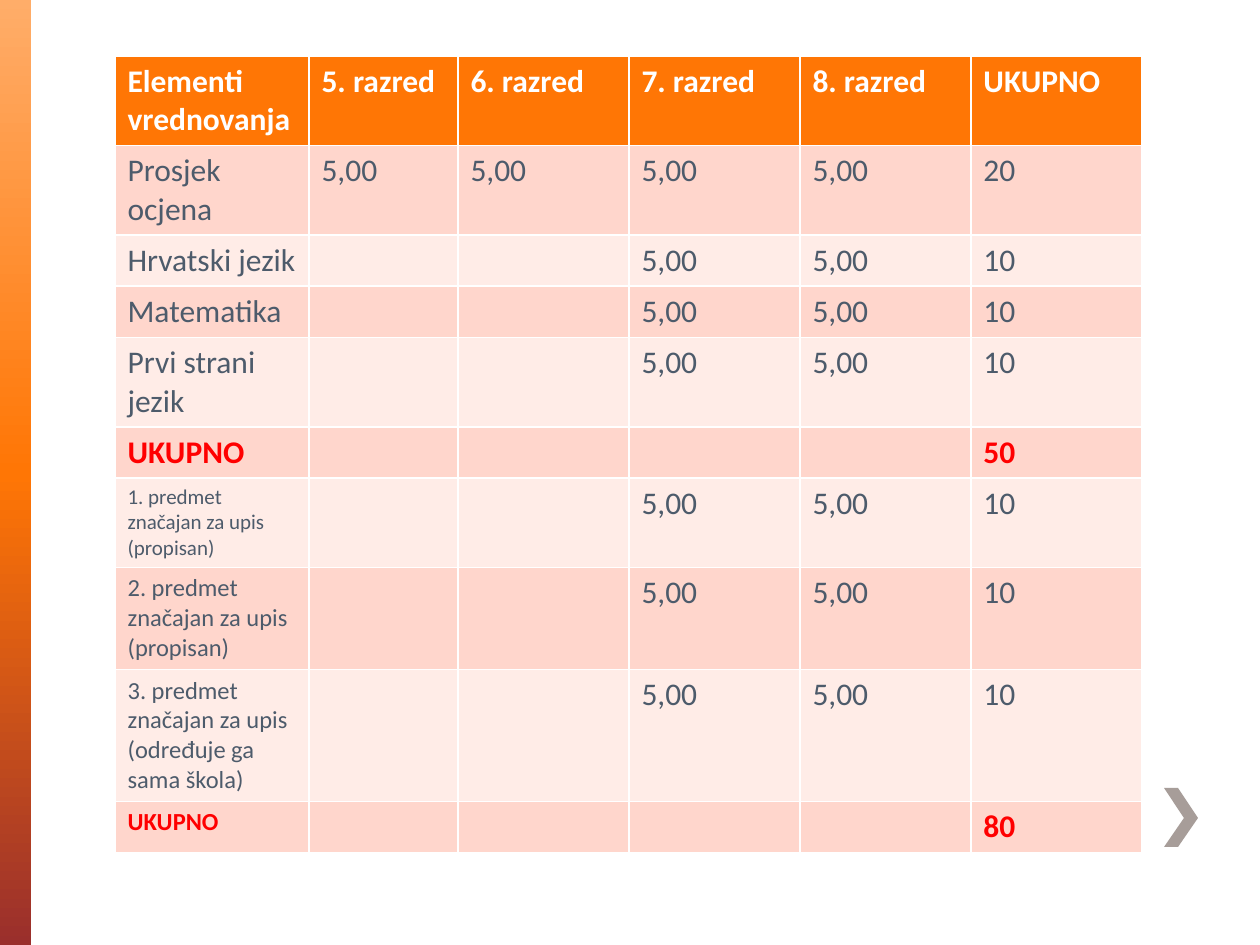
from copy import deepcopy

from pptx import Presentation
from pptx.dml.color import RGBColor
from pptx.enum.shapes import MSO_SHAPE
from pptx.oxml.ns import qn
from pptx.util import Pt

SCALE = 914400 / 126
FONT = "Calibri"
WHITE, SLATE, RED = "FFFFFF", "4D5B6B", "FF0000"
ORANGE, PEACH, PALE = "FF7605", "FFD6CC", "FFECE7"
WIDTHS = [194, 149, 171, 171, 171, 171]
ROW = 51
HEAD = ["Elementi vrednovanja", "5. razred", "6. razred", "7. razred",
        "8. razred", "UKUPNO"]
LATE = ["", "", "5,00", "5,00", "10"]
BODY = [
    ("Prosjek ocjena", 18, ["5,00"] * 4 + ["20"]),
    ("Hrvatski jezik", 18, LATE),
    ("Matematika", 18, LATE),
    ("Prvi strani jezik", 18, LATE),
    ("UKUPNO", 18, [""] * 4 + ["50"]),
    ("1. predmet značajan za upis (propisan)", 12, LATE),
    ("2. predmet značajan za upis (propisan)", 14, LATE),
    ("3. predmet značajan za upis (određuje ga sama škola)", 14, LATE),
    ("UKUPNO", 14, [""] * 4 + ["80"]),
]


def px(count):
    """Turn px into EMU."""
    return round(count * SCALE)


def color(text):
    """Turn a hex string into a colour."""
    return RGBColor.from_string(text)


def add_band(slide, left, top, width, height):
    """Draw the gradient band at the slide's edge."""
    band = slide.shapes.add_shape(MSO_SHAPE.RECTANGLE, px(left), px(top),
                                  px(width), px(height))
    band.shadow.inherit = False
    band.line.fill.background()
    band.fill.gradient()
    band.fill.gradient_angle = 270
    stops = band._element.spPr.find(".//" + qn("a:gsLst"))
    stops.append(deepcopy(stops[-1]))
    shades = [(0, "FFAD69"), (0.5, ORANGE), (1, "9A2F2C")]
    for stop, (place, shade) in zip(band.fill.gradient_stops, shades):
        stop.position = place
        stop.color.rgb = color(shade)


def add_arrow(slide, left, top, width, height):
    """Draw the grey chevron within its box."""
    mid, arm = height / 2, 14
    points = [(0, 0), (width - arm, mid), (0, height), (arm, height),
              (width, mid), (arm, 0)]
    spots = [(left + x, top + y) for x, y in points]
    build = slide.shapes.build_freeform(*spots[0], scale=SCALE)
    build.add_line_segments(spots[1:], close=True)
    arrow = build.convert_to_shape()
    arrow.shadow.inherit = False
    arrow.line.fill.background()
    arrow.fill.solid()
    arrow.fill.fore_color.rgb = color("A79D99")


def fill_row(row, texts, back, ink, bold, lead=18):
    """Fill one table row, its first cell in the lead size."""
    for col, (cell, text) in enumerate(zip(row.cells, texts)):
        cell.fill.solid()
        cell.fill.fore_color.rgb = color(back)
        cell.text_frame.text = text
        font = cell.text_frame.paragraphs[0].font
        if text:
            font = cell.text_frame.paragraphs[0].runs[0].font
        font.name = FONT
        font.size = Pt(lead if col == 0 else 18)
        font.bold = bold
        font.color.rgb = color(ink)


def add_grades(slide, left, top):
    """Place the table of grades and points."""
    count = len(BODY) + 1
    table = slide.shapes.add_table(count, len(WIDTHS), px(left), px(top),
                                   px(sum(WIDTHS)), px(ROW * count)).table
    for column, width in zip(table.columns, WIDTHS):
        column.width = px(width)
    for row in table.rows:
        row.height = px(ROW)
    fill_row(table.rows[0], HEAD, ORANGE, WHITE, True)
    for index, (name, size, marks) in enumerate(BODY):
        total = name == "UKUPNO"
        fill_row(table.rows[index + 1], [name] + marks,
                 PALE if index % 2 else PEACH,
                 RED if total else SLATE, total, size)


def main():
    """Build and save the slide."""
    deck = Presentation()
    deck.slide_width, deck.slide_height = px(1260), px(945)
    slide = deck.slides.add_slide(deck.slide_layouts[6])
    add_band(slide, 0, 0, 31, 945)
    add_arrow(slide, 1164, 788, 34, 59)
    add_grades(slide, 115, 56)
    deck.save("out.pptx")


if __name__ == "__main__":
    main()
